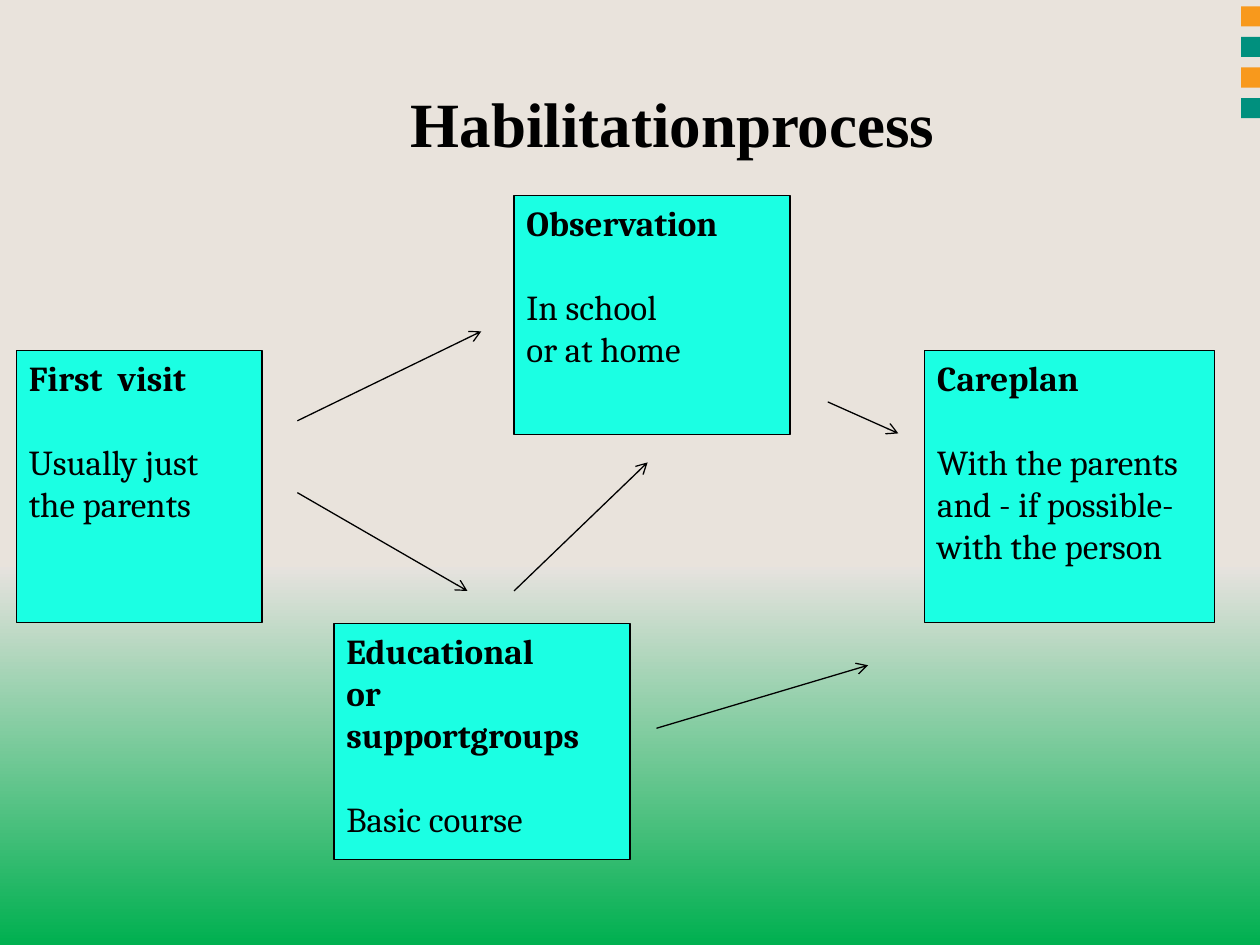
from copy import deepcopy

from lxml.etree import SubElement
from pptx import Presentation
from pptx.dml.color import RGBColor
from pptx.enum.shapes import MSO_CONNECTOR, MSO_SHAPE
from pptx.enum.text import MSO_ANCHOR, MSO_AUTO_SIZE, PP_ALIGN
from pptx.oxml.ns import qn
from pptx.util import Inches, Pt

BLACK, TURQUOISE, SAND = "000000", "1BFFE3", "E9E3DC"
ORANGE, GREEN = "F8991C", "00907E"
GRADIENT = [(0, SAND), (0.6, "E6E2DE"), (1, "00B050")]

# Box (left, top, width, height), heading lines, body lines, alignment
STEPS = [
    ((7.34, 2.78, 2.3, 2.16), ["Careplan"],
     ["With the parents", "and - if possible- with the person"], PP_ALIGN.LEFT),
    ((4.08, 1.55, 2.19, 1.9), ["Observation"],
     ["In school", "or at home"], PP_ALIGN.JUSTIFY),
    ((0.13, 2.78, 1.95, 2.16), ["First  visit"],
     ["Usually just the parents"], PP_ALIGN.LEFT),
    ((2.65, 4.95, 2.35, 1.87), ["Educational", "or supportgroups"],
     ["Basic course"], PP_ALIGN.JUSTIFY),
]
ARROWS = [
    ((6.57, 3.19), (7.13, 3.44)),
    ((2.36, 3.34), (3.82, 2.63)),
    ((2.36, 3.91), (3.71, 4.69)),
    ((5.21, 5.78), (6.89, 5.28)),
    ((4.08, 4.69), (5.14, 3.67)),
]


def color(value):
    return RGBColor.from_string(value)


def set_background(slide):
    fill = slide.background.fill
    fill.gradient()
    fill.gradient_angle = 270  # counter-clockwise, so top to bottom
    stop_list = slide.element.xpath(".//a:gsLst")[0]
    stop_list.append(deepcopy(stop_list[0]))
    for stop, (position, value) in zip(fill.gradient_stops, GRADIENT):
        stop.position = position
        stop.color.rgb = color(value)


def add_rectangle(slide, box, fill, line=None):
    shape = slide.shapes.add_shape(MSO_SHAPE.RECTANGLE, *map(Inches, box))
    shape.shadow.inherit = False
    shape.fill.solid()
    shape.fill.fore_color.rgb = color(fill)
    if line:
        shape.line.color.rgb = color(line)
        shape.line.width = Pt(0.75)
    else:
        shape.line.fill.background()
    return shape


def write(paragraph, text, size=20, font="Cambria", bold=False,
          align=PP_ALIGN.LEFT, space_before=0):
    paragraph.text = text
    paragraph.alignment = align
    paragraph.space_before = Pt(space_before)
    paragraph.font.size = Pt(size)
    paragraph.font.name = font
    paragraph.font.bold = bold
    paragraph.font.color.rgb = color(BLACK)


def add_header_band(slide, box):
    """Plain band with alternating squares down its right edge."""
    left, top, width, _ = box
    add_rectangle(slide, box, SAND)
    side, pitch = 0.16, 0.243
    for row, fill in enumerate([ORANGE, GREEN] * 2):
        add_rectangle(slide, (left + width - 0.15, top + 0.05 + row * pitch,
                              side, side), fill)


def add_title(slide, box):
    title = slide.shapes.title
    title.left, title.top, title.width, title.height = map(Inches, box)
    frame = title.text_frame
    frame.auto_size = MSO_AUTO_SIZE.NONE
    frame.vertical_anchor = MSO_ANCHOR.BOTTOM
    write(frame.paragraphs[0], "Habilitationprocess", size=36,
          font="Times New Roman", bold=True, align=PP_ALIGN.CENTER)
    slide.shapes.element.append(title.element)  # in front of the band


def add_step(slide, box, heading, body, align):
    frame = add_rectangle(slide, box, TURQUOISE, BLACK).text_frame
    frame.word_wrap = True
    frame.vertical_anchor = MSO_ANCHOR.TOP
    for index, text in enumerate(heading + body):
        paragraph = frame.add_paragraph() if index else frame.paragraphs[0]
        write(paragraph, text, bold=index < len(heading), align=align,
              space_before=24 if index == len(heading) else 0)


def add_arrow(slide, start, end):
    connector = slide.shapes.add_connector(
        MSO_CONNECTOR.STRAIGHT, *map(Inches, start + end))
    connector.line.color.rgb = color(BLACK)
    connector.line.width = Pt(0.75)
    SubElement(connector.line._get_or_add_ln(), qn("a:tailEnd"), type="arrow")
    SubElement(connector.element.spPr, qn("a:effectLst"))


def main():
    presentation = Presentation()
    presentation.slide_width = Inches(10)
    presentation.slide_height = Inches(7.5)
    slide = presentation.slides.add_slide(presentation.slide_layouts[5])
    set_background(slide)
    add_header_band(slide, (0, 0, 10, 0.99))
    add_title(slide, (0.34, 0.01, 10, 1.31))
    for step in STEPS:
        add_step(slide, *step)
    for start, end in ARROWS:
        add_arrow(slide, start, end)
    presentation.save("out.pptx")


if __name__ == "__main__":
    main()
